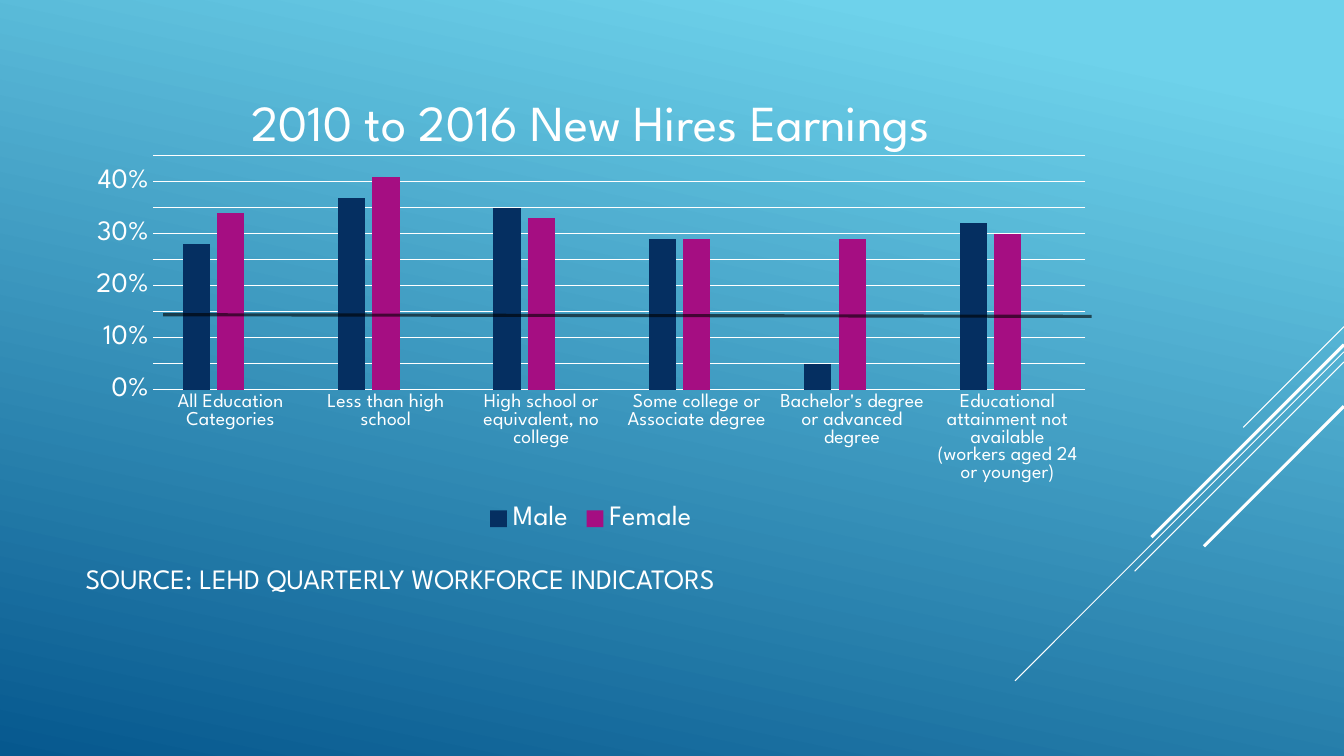
from dataclasses import dataclass

from lxml import etree
from pptx import Presentation
from pptx.chart.data import CategoryChartData
from pptx.dml.color import RGBColor
from pptx.enum.chart import XL_CHART_TYPE, XL_LEGEND_POSITION, XL_TICK_MARK
from pptx.enum.shapes import MSO_CONNECTOR
from pptx.enum.text import MSO_ANCHOR
from pptx.oxml import parse_xml
from pptx.oxml.ns import nsdecls, qn
from pptx.util import Pt


@dataclass(frozen=True)
class Theme:
    font: str = "League Spartan"
    sky: str = "6ED2EB"
    deep_blue: str = "06588E"
    white: str = "FFFFFF"
    black: str = "000000"
    male: str = "052F61"
    female: str = "A50E82"
    spare: str = "14967C"
    heading_size: float = 36
    body_size: float = 20
    category_size: float = 14
    thin: float = 0.75
    thick: float = 2.25


class SlideBuilder:
    def __init__(self, slide, theme):
        self.slide = slide
        self.theme = theme

    def style_font(self, font, size):
        font.name = self.theme.font
        font.size = Pt(size)
        font.bold = False
        font.color.rgb = RGBColor.from_string(self.theme.white)

    def style_line(self, line, color, width):
        line.color.rgb = RGBColor.from_string(color)
        line.width = Pt(width)

    def background(self, angle):
        fill = self.slide.background.fill
        fill.gradient()
        fill.gradient_angle = angle
        stops = ((0.1, self.theme.sky), (1, self.theme.deep_blue))
        for stop, (position, color) in zip(fill.gradient_stops, stops):
            stop.position = position
            stop.color.rgb = RGBColor.from_string(color)

    def line(self, start, end, color, width, opacity=100):
        connector = self.slide.shapes.add_connector(
            MSO_CONNECTOR.STRAIGHT, *(Pt(v) for v in (*start, *end)))
        self.style_line(connector.line, color, width)
        properties = connector._element.spPr
        etree.SubElement(properties, qn("a:effectLst"))
        if opacity < 100:
            tint = properties.find(".//" + qn("a:srgbClr"))
            etree.SubElement(tint, qn("a:alpha"), val=str(opacity * 1000))

    def text(self, box, content, size):
        frame = self.slide.shapes.add_textbox(*(Pt(v) for v in box)).text_frame
        frame.word_wrap = True
        frame.vertical_anchor = MSO_ANCHOR.MIDDLE
        run = frame.paragraphs[0].add_run()
        run.text = content
        self.style_font(run.font, size)

    def column_chart(self, box, heading, categories, series, plot_area):
        theme = self.theme
        data = CategoryChartData(number_format="0%")
        data.categories = categories
        for name, values, _ in series:
            data.add_series(name, values)
        chart = self.slide.shapes.add_chart(
            XL_CHART_TYPE.COLUMN_CLUSTERED, *(Pt(v) for v in box), data).chart
        self.style_font(chart.font, theme.body_size)

        # Heading
        chart.has_title = True
        run = chart.chart_title.text_frame.paragraphs[0].add_run()
        run.text = heading
        self.style_font(run.font, theme.heading_size)
        chart.chart_title.include_in_layout = False

        # Columns
        plot = chart.plots[0]
        plot.gap_width = 219
        plot.overlap = -27
        plot.vary_by_categories = False
        for columns, (_, _, color) in zip(plot.series, series):
            columns.format.fill.solid()
            columns.format.fill.fore_color.rgb = RGBColor.from_string(color)

        # Axes
        earnings, education = chart.value_axis, chart.category_axis
        for axis, size in ((earnings, theme.body_size),
                           (education, theme.category_size)):
            axis.major_tick_mark = axis.minor_tick_mark = XL_TICK_MARK.NONE
            self.style_font(axis.tick_labels.font, size)
        self.style_line(education.format.line, theme.white, theme.thin)
        earnings.format.line.fill.background()
        earnings.minimum_scale, earnings.maximum_scale = 0, 0.45
        earnings.major_unit = 0.05
        earnings.tick_labels.number_format = "0%"
        earnings.tick_labels.number_format_is_linked = False
        self.style_line(earnings.major_gridlines.format.line,
                        theme.white, theme.thin)

        # Legend, without the entry of the empty third series
        chart.has_legend = True
        chart.legend.position = XL_LEGEND_POSITION.BOTTOM
        chart.legend.include_in_layout = False
        self.style_font(chart.legend.font, theme.body_size)
        chart.legend._element.find(qn("c:legendPos")).addnext(parse_xml(
            f'<c:legendEntry {nsdecls("c")}><c:idx val="2"/>'
            '<c:delete val="1"/></c:legendEntry>'))

        # Plot area as shares of the chart
        area = chart._chartSpace.chart.plotArea
        for old_layout in area.findall(qn("c:layout")):
            area.remove(old_layout)
        shares = "".join(f'<c:{key} val="{share}"/>'
                         for key, share in zip("xywh", plot_area))
        area.insert(0, parse_xml(
            f'<c:layout {nsdecls("c")}><c:manualLayout>'
            '<c:layoutTarget val="inner"/><c:xMode val="edge"/>'
            f'<c:yMode val="edge"/>{shares}</c:manualLayout></c:layout>'))


def main():
    theme = Theme()
    deck = Presentation()
    deck.slide_width, deck.slide_height = Pt(960), Pt(540)
    page = SlideBuilder(deck.slides.add_slide(deck.slide_layouts[6]), theme)
    page.background(angle=258)

    # Diagonal rays at 45 degrees from the right edge: top, reach, width
    rays = ((233.3, 72, theme.thin), (251.3, 235, theme.thin),
            (258.5, 149.5, theme.thin), (246.2, 137.5, theme.thick),
            (290.2, 100, theme.thick))
    for top, reach, width in rays:
        page.line((960, top), (960 - reach, top + reach), theme.white, width)

    # Source note
    page.text((54, 353.5, 672, 119),
              "SOURCE: LEHD QUARTERLY WORKFORCE INDICATORS", theme.body_size)

    # Earnings chart; the empty third series keeps its room in each group
    categories = (
        "All Education Categories",
        "Less than high school",
        "High school or equivalent, no college",
        "Some college or Associate degree",
        "Bachelor's degree or advanced degree",
        "Educational attainment not available (workers aged 24 or younger)",
    )
    series = (
        ("Male", (0.28, 0.37, 0.35, 0.29, 0.05, 0.32), theme.male),
        ("Female", (0.34, 0.41, 0.33, 0.29, 0.29, 0.3), theme.female),
        ("Series 3", (None,) * len(categories), theme.spare),
    )
    page.column_chart((54, 54, 736, 330), "2010 to 2016 New Hires Earnings",
                      categories, series, plot_area=(0.075, 0.174, 0.905, 0.506))

    # Reference line across the columns
    page.line((116.6, 224.8), (779.8, 226), theme.black, theme.thick, opacity=60)

    deck.save("out.pptx")


if __name__ == "__main__":
    main()
